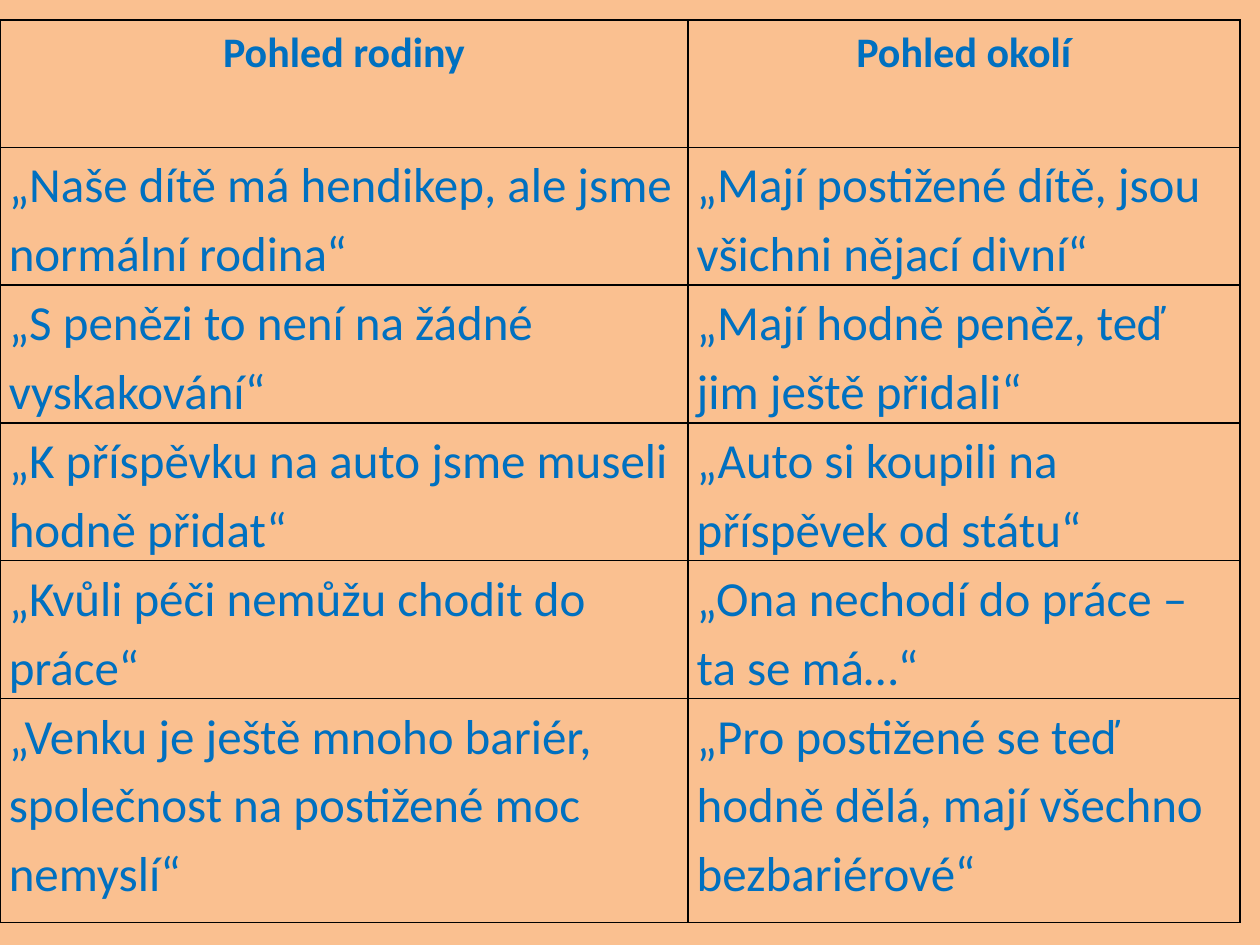
from lxml import etree
from pptx import Presentation
from pptx import util as u
from pptx.dml import color
from pptx.enum import text
from pptx.oxml import ns


def paint(fill, code):
    fill.solid()
    fill.fore_color.rgb = color.RGBColor.from_string(code)


def border(cell, code, width):
    props = cell._tc.get_or_add_tcPr()
    for spot, side in enumerate(("lnL", "lnR", "lnT", "lnB")):
        line = etree.Element(ns.qn("a:" + side), w=str(u.Pt(width)))
        fill = etree.SubElement(line, ns.qn("a:solidFill"))
        etree.SubElement(fill, ns.qn("a:srgbClr"), val=code)
        props.insert(spot, line)


views = [
    ("Pohled rodiny", "Pohled okolí"),
    ("„Naše dítě má hendikep, ale jsme normální rodina“",
     "„Mají postižené dítě, jsou všichni nějací divní“"),
    ("„S penězi to není na žádné vyskakování“",
     "„Mají hodně peněz, teď jim ještě přidali“"),
    ("„K příspěvku na auto jsme museli hodně přidat“",
     "„Auto si koupili na příspěvek od státu“"),
    ("„Kvůli péči nemůžu chodit do práce“",
     "„Ona nechodí do práce – ta se má…“"),
    ("„Venku je ještě mnoho bariér, společnost na postižené moc nemyslí“",
     "„Pro postižené se teď hodně dělá, mají všechno bezbariérové“"),
]
cols = [5.46, 4.38]
rows = [1.01] + [0.72] * 4 + [1.78]

deck = Presentation()
deck.slide_width, deck.slide_height = u.Inches(10), u.Inches(7.5)
slide = deck.slides.add_slide(deck.slide_layouts[6])
paint(slide.background.fill, "FAC090")

high = u.Inches(7.08)
frame = slide.shapes.add_table(
    len(rows), len(cols), 0, u.Inches(0.16), u.Inches(sum(cols)), high)
table = frame.table
table.first_row = table.horz_banding = False
for col, wide in zip(table.columns, cols):
    col.width = u.Inches(wide)
for row, tall in zip(table.rows, rows):
    row.height = u.Inches(tall)
frame.height = high

for r, pair in enumerate(views):
    for c, view in enumerate(pair):
        cell = table.cell(r, c)
        cell.fill.background()
        border(cell, "000000", 1)
        cell.margin_left = cell.margin_right = u.Inches(0.07)
        cell.margin_top = cell.margin_bottom = 0
        cell.text = view
        para = cell.text_frame.paragraphs[0]
        para.line_spacing = 1.15
        para.alignment = text.PP_ALIGN.LEFT if r else text.PP_ALIGN.CENTER
        para.font.name = "Calibri"
        para.font.size = u.Pt(28 if r else 24)
        para.font.bold = r == 0
        paint(para.font.fill, "0070C0")

deck.save("out.pptx")
